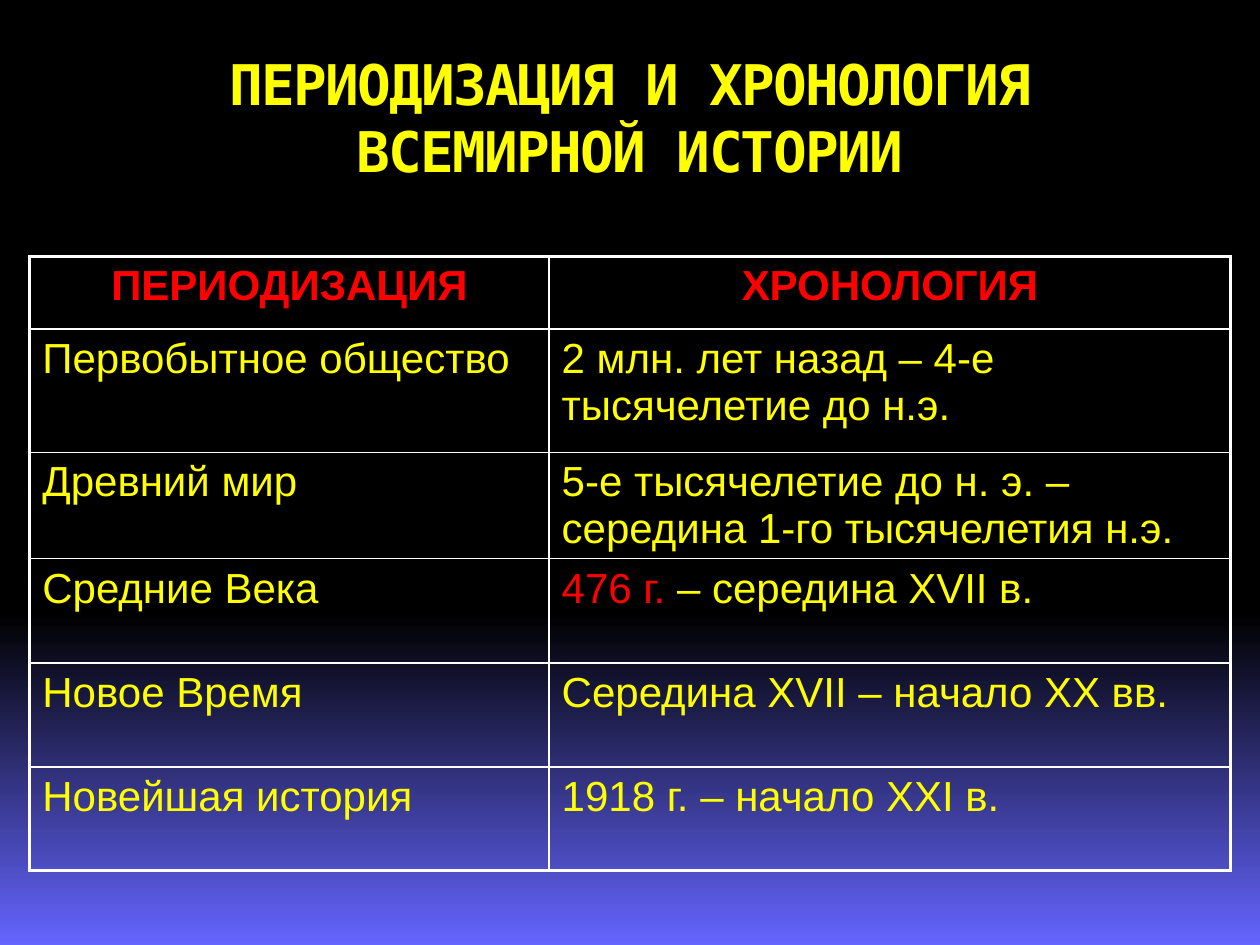
from dataclasses import dataclass
from lxml import etree
from pptx import Presentation
from pptx import util as u
from pptx.dml import color
from pptx.enum import text
from pptx.oxml import ns


@dataclass(frozen=True)
class Theme:
    black: str = "000000"
    blue: str = "6565FF"
    yellow: str = "FFFF00"
    red: str = "FF0000"
    white: str = "FFFFFF"
    mono: str = "DejaVu Sans Mono"
    sans: str = "Arial"
    head: int = 32
    body: int = 24
    thick: float = 2.25
    thin: float = 1


look = Theme()


def add_run(para, words, face, size, tint, bold=False):
    run = para.add_run()
    run.text = words
    font = run.font
    font.name, font.size, font.bold = face, u.Pt(size), bold
    font.color.rgb = color.RGBColor.from_string(tint)
    return run


def add_edge(cell, side, width):
    props = cell._tc.get_or_add_tcPr()
    line = etree.SubElement(props, ns.qn(f"a:{side}"), w=str(u.Pt(width)))
    fill = etree.SubElement(line, ns.qn("a:solidFill"))
    etree.SubElement(fill, ns.qn("a:srgbClr"), val=look.white)


deck = Presentation()
deck.slide_width, deck.slide_height = u.Cm(25.4), u.Cm(19.05)
slide = deck.slides.add_slide(deck.slide_layouts[5])

back = slide.background.fill
back.gradient()
back.gradient_angle = 270
for stop, place, tint in zip(back.gradient_stops, (0.65, 1), (look.black, look.blue)):
    stop.position = place
    stop.color.rgb = color.RGBColor.from_string(tint)

title = slide.shapes.title
title.left, title.top = u.Cm(1.27), u.Cm(0.76)
title.width, title.height = u.Cm(22.86), u.Cm(3.18)
frame = title.text_frame
frame.word_wrap = True
frame.auto_size = text.MSO_AUTO_SIZE.NONE
frame.vertical_anchor = text.MSO_ANCHOR.MIDDLE
para = frame.paragraphs[0]
para.alignment = text.PP_ALIGN.CENTER
run = add_run(para, "ПЕРИОДИЗАЦИЯ И ХРОНОЛОГИЯ ВСЕМИРНОЙ ИСТОРИИ",
              look.mono, look.head, look.yellow, True)
run._r.get_or_add_rPr().set("spc", "-100")

rows = [
    ("ПЕРИОДИЗАЦИЯ", [("ХРОНОЛОГИЯ", look.red)]),
    ("Первобытное общество", [("2 млн. лет назад – 4-е тысячелетие до н.э.", look.yellow)]),
    ("Древний мир", [("5-е тысячелетие до н. э. – середина 1-го тысячелетия н.э.", look.yellow)]),
    ("Средние Века", [("476 г. ", look.red), ("– середина XVII в.", look.yellow)]),
    ("Новое Время", [("Середина XVII – начало XX вв.", look.yellow)]),
    ("Новейшая история", [("1918 г. – начало XXI в.", look.yellow)]),
]
wide = (10.47, 13.74)
high = (1.46, 2.49, 2.12, 2.1, 2.1, 2.09)
grid = slide.shapes.add_table(len(rows), len(wide), u.Cm(0.6), u.Cm(5.17),
                              u.Cm(sum(wide)), u.Cm(sum(high))).table
grid.first_row = grid.horz_banding = False
for col, size in zip(grid.columns, wide):
    col.width = u.Cm(size)

last = len(rows) - 1
for i, (era, dates) in enumerate(rows):
    grid.rows[i].height = u.Cm(high[i])
    top = i == 0
    first = [(era, look.red if top else look.yellow)]
    for j, parts in enumerate((first, dates)):
        cell = grid.cell(i, j)
        para = cell.text_frame.paragraphs[0]
        para.alignment = text.PP_ALIGN.CENTER if top else text.PP_ALIGN.LEFT
        for words, tint in parts:
            add_run(para, words, look.sans, look.body, tint, top)
        outer = {"lnL": j == 0, "lnR": j == 1, "lnT": top, "lnB": i == last}
        for side, edge in outer.items():
            add_edge(cell, side, look.thick if edge else look.thin)
        cell.fill.background()

deck.save("out.pptx")
